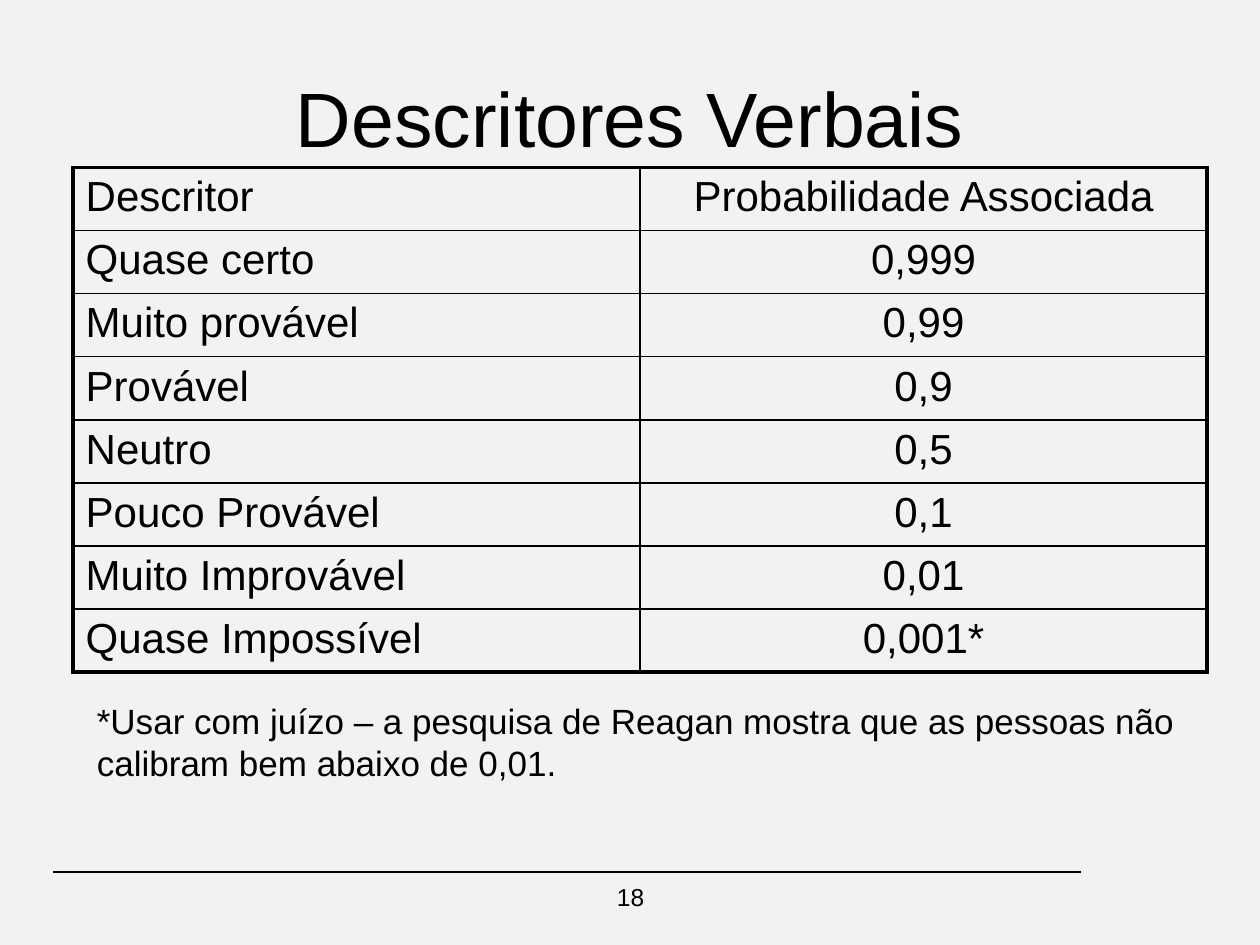
from typing import NamedTuple

from lxml.etree import SubElement as Sub
from pptx import Presentation
from pptx.dml.color import RGBColor
from pptx.enum.shapes import MSO_CONNECTOR as Conn
from pptx.enum.text import MSO_ANCHOR as Anchor, PP_ALIGN as Align
from pptx.oxml.ns import qn
from pptx.util import Inches, Pt

HUES = {"ink": "000000", "back": "F2F2F2"}
FONT = "Arial"
THICK, THIN = 2.25, 1


class Row(NamedTuple):
    label: str
    odds: str


ROWS = [
    Row("Descritor", "Probabilidade Associada"),
    Row("Quase certo", "0,999"),
    Row("Muito provável", "0,99"),
    Row("Provável", "0,9"),
    Row("Neutro", "0,5"),
    Row("Pouco Provável", "0,1"),
    Row("Muito Improvável", "0,01"),
    Row("Quase Impossível", "0,001*"),
]


def hue(name: str) -> RGBColor:
    return RGBColor.from_string(HUES[name])


def write(frame, text: str, *, size: float, align=Align.LEFT, anchor=Anchor.TOP) -> None:
    frame.word_wrap = True
    frame.vertical_anchor = anchor
    para = frame.paragraphs[0]
    para.alignment = align
    run = para.add_run()
    run.text = text
    run.font.name = FONT
    run.font.size = Pt(size)
    run.font.color.rgb = hue("ink")


def place(shape, left: float, top: float, width: float, height: float) -> None:
    shape.left, shape.top = Inches(left), Inches(top)
    shape.width, shape.height = Inches(width), Inches(height)


def add_box(slide, left: float, top: float, width: float, height: float):
    box = slide.shapes.add_textbox(Inches(left), Inches(top), Inches(width), Inches(height))
    return box.text_frame


def edge(cell, side: str, width: float) -> None:
    props = cell._tc.get_or_add_tcPr()
    line = Sub(props, qn(f"a:ln{side}"), w=str(Pt(width)))
    fill = Sub(line, qn("a:solidFill"))
    Sub(fill, qn("a:srgbClr"), val=HUES["ink"])


def add_grid(slide, rows: list[Row]) -> None:
    count, cols = len(rows), len(Row._fields)
    table = slide.shapes.add_table(
        count, cols, Inches(0.58), Inches(1.33), Inches(9), Inches(0.5 * count)
    ).table
    table.first_row = table.horz_banding = False
    for r, row in enumerate(rows):
        for c, text in enumerate(row):
            cell = table.cell(r, c)
            # Thick frame outside, thin rules inside
            outer = {"L": c == 0, "R": c == cols - 1, "T": r == 0, "B": r == count - 1}
            for side, thick in outer.items():
                edge(cell, side, THICK if thick else THIN)
            cell.fill.background()
            write(cell.text_frame, text, size=24, align=Align.CENTER if c else Align.LEFT)


def main() -> None:
    prs = Presentation()
    prs.slide_width, prs.slide_height = Inches(10), Inches(7.5)
    slide = prs.slides.add_slide(prs.slide_layouts[5])
    slide.background.fill.solid()
    slide.background.fill.fore_color.rgb = hue("back")

    # Footer rule and page number
    rule = slide.shapes.add_connector(
        Conn.STRAIGHT, Inches(8.58), Inches(6.92), Inches(0.42), Inches(6.92)
    )
    rule.line.color.rgb = hue("ink")
    rule.line.width = Pt(0.75)
    Sub(rule._element.spPr, qn("a:effectLst"))
    write(add_box(slide, 3.42, 6.95, 3.17, 0.4), "18", size=14, align=Align.CENTER)

    # Title
    title = slide.shapes.title
    place(title, 0.5, 0.3, 9, 1.25)
    write(title.text_frame, "Descritores Verbais", size=44,
          align=Align.CENTER, anchor=Anchor.MIDDLE)

    # Table and its footnote
    add_grid(slide, ROWS)
    write(
        add_box(slide, 0.67, 5.5, 8.92, 0.77),
        "*Usar com juízo – a pesquisa de Reagan mostra que as pessoas não "
        "calibram bem abaixo de 0,01.",
        size=20,
    )
    prs.save("out.pptx")


if __name__ == "__main__":
    main()
